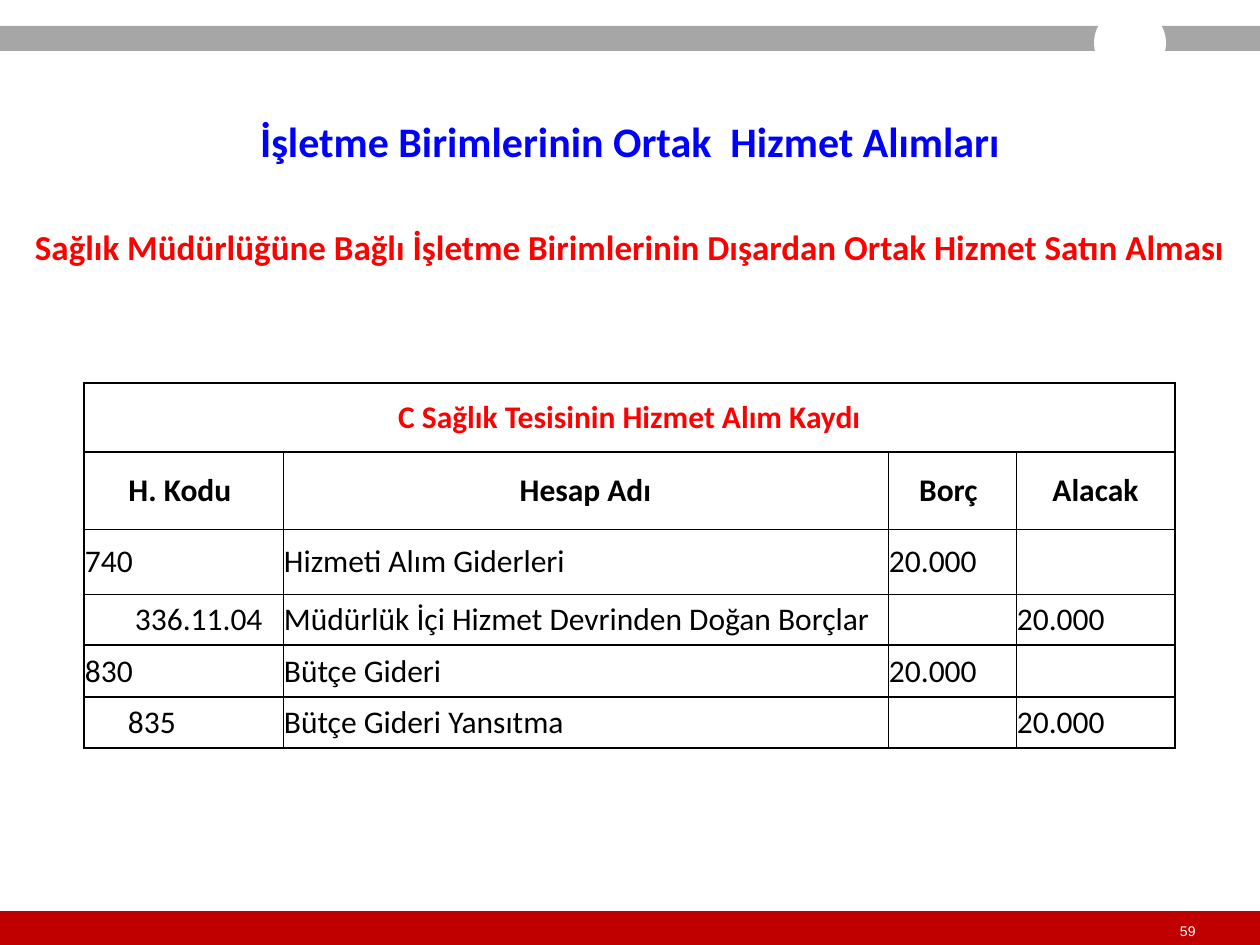
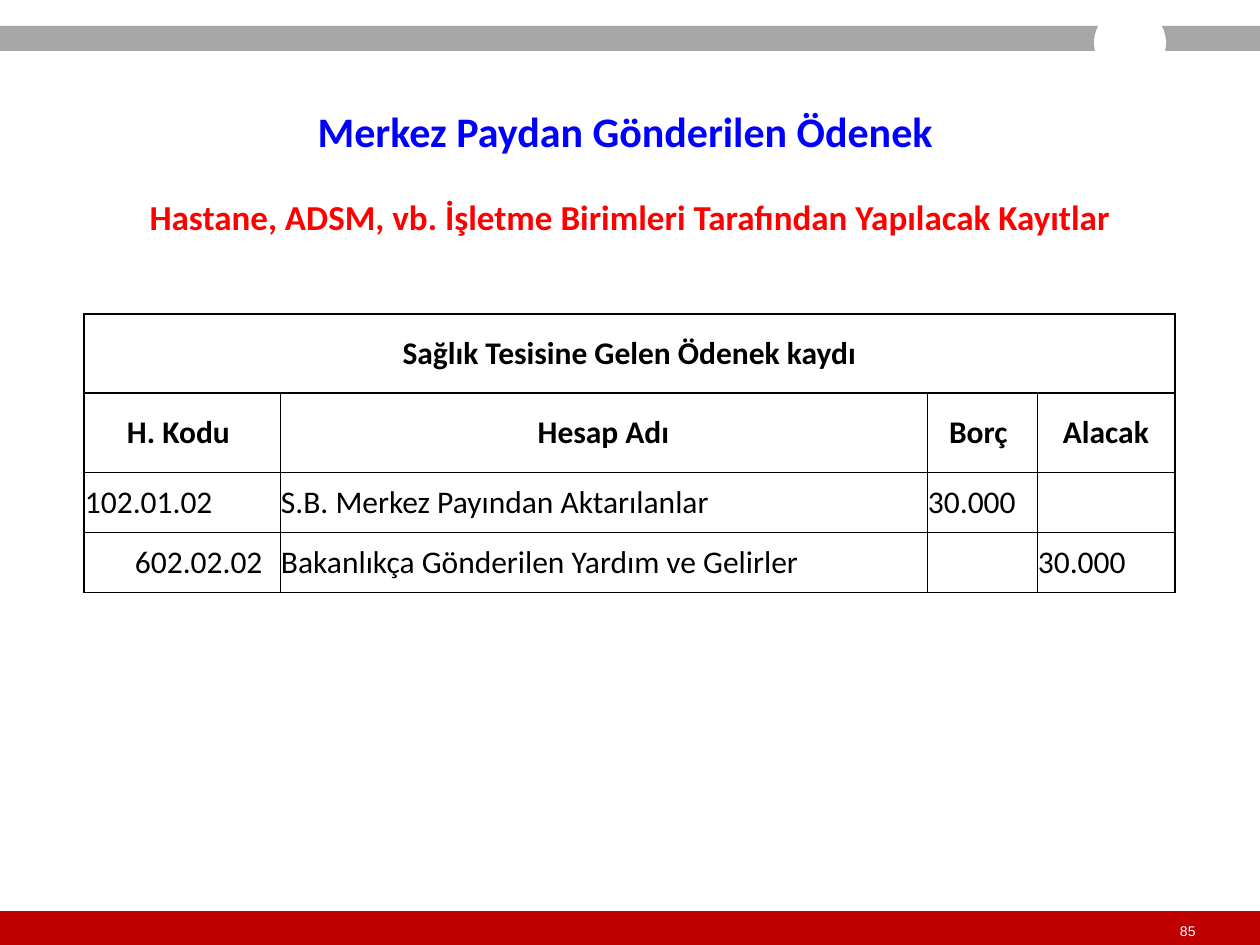
from pptx import Presentation
from pptx.dml.color import RGBColor
from pptx.enum.shapes import MSO_SHAPE as Shape
from pptx.enum.text import MSO_ANCHOR as Anchor, MSO_AUTO_SIZE as AutoSize, PP_ALIGN as Align
from pptx.oxml import parse_xml
from pptx.oxml.ns import nsdecls
from pptx.util import Pt

EMU_PER_PX = 914400 / 126
SLIDE_WIDTH, SLIDE_HEIGHT = 1260, 945
TABLE_LEFT = 84
TITLE_ONLY = 5

WHITE = RGBColor(0xFF, 0xFF, 0xFF)
BLACK = RGBColor(0x00, 0x00, 0x00)
RED = RGBColor(0xFF, 0x00, 0x00)
BLUE = RGBColor(0x00, 0x00, 0xFF)
BAND_GREY = RGBColor(0xA6, 0xA6, 0xA6)
FOOTER_RED = RGBColor(0xC0, 0x00, 0x00)

HEADINGS = ("H. Kodu ", "Hesap Adı", "Borç ", "Alacak")


def px(length):
    return round(length * EMU_PER_PX)


def box(*lengths):
    return [px(length) for length in lengths]


class Deck:
    """Holds the shared style and the slide being filled."""

    def __init__(self):
        self.presentation = Presentation()
        self.presentation.slide_width = px(SLIDE_WIDTH)
        self.presentation.slide_height = px(SLIDE_HEIGHT)
        self.slide = None

    def new_slide(self, number):
        layout = self.presentation.slide_layouts[TITLE_ONLY]
        self.slide = self.presentation.slides.add_slide(layout)
        self.block(Shape.RECTANGLE, 0, 911, SLIDE_WIDTH, 34, FOOTER_RED)
        self.page_number(number)
        self.block(Shape.RECTANGLE, 0, 26, SLIDE_WIDTH, 25, BAND_GREY)
        self.block(Shape.OVAL, 1094, 7, 72, 72, WHITE)

    def block(self, kind, left, top, width, height, color):
        shape = self.slide.shapes.add_shape(kind, *box(left, top, width, height))
        shape.shadow.inherit = False
        shape.fill.solid()
        shape.fill.fore_color.rgb = color
        shape.line.fill.background()

    def set_text(self, text_frame, text, size, color, bold=True, align=Align.CENTER,
                 font="Calibri"):
        text_frame.text = text
        paragraph = text_frame.paragraphs[0]
        paragraph.alignment = align
        for run in paragraph.runs:
            run.font.name = font
            run.font.size = Pt(size)
            run.font.bold = bold
            run.font.color.rgb = color
        return paragraph

    def title(self, text, height):
        shape = self.slide.shapes.title
        shape.left, shape.top, shape.width, shape.height = box(0, 106, SLIDE_WIDTH, height)
        shape.fill.solid()
        shape.fill.fore_color.rgb = WHITE
        shape.text_frame.auto_size = AutoSize.NONE
        shape.text_frame.vertical_anchor = Anchor.MIDDLE
        self.set_text(shape.text_frame, text, 24, BLUE)

    def subtitle(self, text, top):
        shape = self.slide.shapes.add_textbox(*box(0, top, SLIDE_WIDTH, 55))
        shape.text_frame.word_wrap = True
        self.set_text(shape.text_frame, text, 20, RED)

    def page_number(self, number):
        frame = self.slide.shapes.add_textbox(*box(1180, 922, 18, 17)).text_frame
        frame.margin_left = frame.margin_right = frame.margin_top = frame.margin_bottom = 0
        frame.word_wrap = False
        frame.vertical_anchor = Anchor.MIDDLE
        self.set_text(frame, str(number), 8, WHITE, False, Align.LEFT, "Arial")

    def borders(self, cell, **widths):
        """Draw the cell's L, R, T and B edges with the given widths in points."""
        properties = cell._tc.get_or_add_tcPr()
        for side, width in widths.items():
            properties.append(parse_xml(
                f'<a:ln{side} {nsdecls("a")} w="{int(Pt(width))}"><a:solidFill>'
                f'<a:srgbClr val="{BLACK}"/></a:solidFill></a:ln{side}>'))

    def ledger(self, top, columns, rows, heading, heading_color, entries, heavy_lines):
        """Add a journal table; an entry is indent, code, account, debit, credit."""
        frame = self.slide.shapes.add_table(
            len(rows), len(columns), *box(TABLE_LEFT, top, sum(columns), sum(rows)))
        table = frame.table
        table.first_row = table.horz_banding = False
        for column, width in zip(table.columns, columns):
            column.width = px(width)
        for row, height in zip(table.rows, rows):
            row.height = px(height)
        table.cell(0, 0).merge(table.cell(0, len(columns) - 1))

        def vertical(row, edge):
            return 1 if row == 0 or edge in (0, len(columns)) else 0.5

        def horizontal(edge):
            return 1 if edge in heavy_lines else 0.5

        for row in range(len(rows)):
            for column in range(len(columns)):
                cell = table.cell(row, column)
                cell.margin_left = cell.margin_right = cell.margin_top = px(1)
                cell.margin_bottom = 0
                cell.vertical_anchor = Anchor.MIDDLE
                self.borders(cell, L=vertical(row, column), R=vertical(row, column + 1),
                             T=horizontal(row), B=horizontal(row + 1))
                cell.fill.background()

        self.set_text(table.cell(0, 0).text_frame, heading, 18, heading_color)
        for column, text in enumerate(HEADINGS):
            self.set_text(table.cell(1, column).text_frame, text, 18, BLACK)
        for row, (indent, *texts) in enumerate(entries, start=2):
            for column, text in enumerate(texts):
                paragraph = self.set_text(table.cell(row, column).text_frame, text, 18, BLACK,
                                          False, Align.LEFT)
                if column == 0 and indent:
                    paragraph._p.get_or_add_pPr().set("marL", str(px(indent)))


def shared_services(deck):
    deck.new_slide(59)
    deck.title("İşletme Birimlerinin Ortak  Hizmet Alımları", 69)
    deck.subtitle("Sağlık Müdürlüğüne Bağlı İşletme Birimlerinin Dışardan "
                  "Ortak Hizmet Satın Alması", 219)
    deck.ledger(
        383, (199, 605, 128, 159), (69, 77, 65, 51, 52, 51),
        "C Sağlık Tesisinin Hizmet Alım Kaydı", RED,
        [(0, "740", "Hizmeti Alım Giderleri", "20.000", ""),
         (50, "336.11.04", "Müdürlük İçi Hizmet Devrinden Doğan Borçlar", "", "20.000"),
         (0, "830", "Bütçe Gideri", "20.000", ""),
         (43, "835", "Bütçe Gideri Yansıtma", "", "20.000")],
        heavy_lines=(0, 1, 4, 5, 6))


def central_allocation(deck):
    deck.new_slide(85)
    deck.title("Merkez Paydan Gönderilen Ödenek ", 49)
    deck.subtitle("Hastane, ADSM, vb. İşletme Birimleri Tarafından Yapılacak Kayıtlar", 189)
    deck.ledger(
        314, (196, 647, 110, 138), (79, 79, 60, 60),
        "Sağlık Tesisine Gelen Ödenek kaydı", BLACK,
        [(0, "102.01.02", "S.B. Merkez Payından Aktarılanlar", "30.000", ""),
         (50, "602.02.02", "Bakanlıkça Gönderilen Yardım ve Gelirler", "", "30.000")],
        heavy_lines=(0, 1))


def main():
    deck = Deck()
    shared_services(deck)
    central_allocation(deck)
    deck.presentation.save("out.pptx")


if __name__ == "__main__":
    main()
